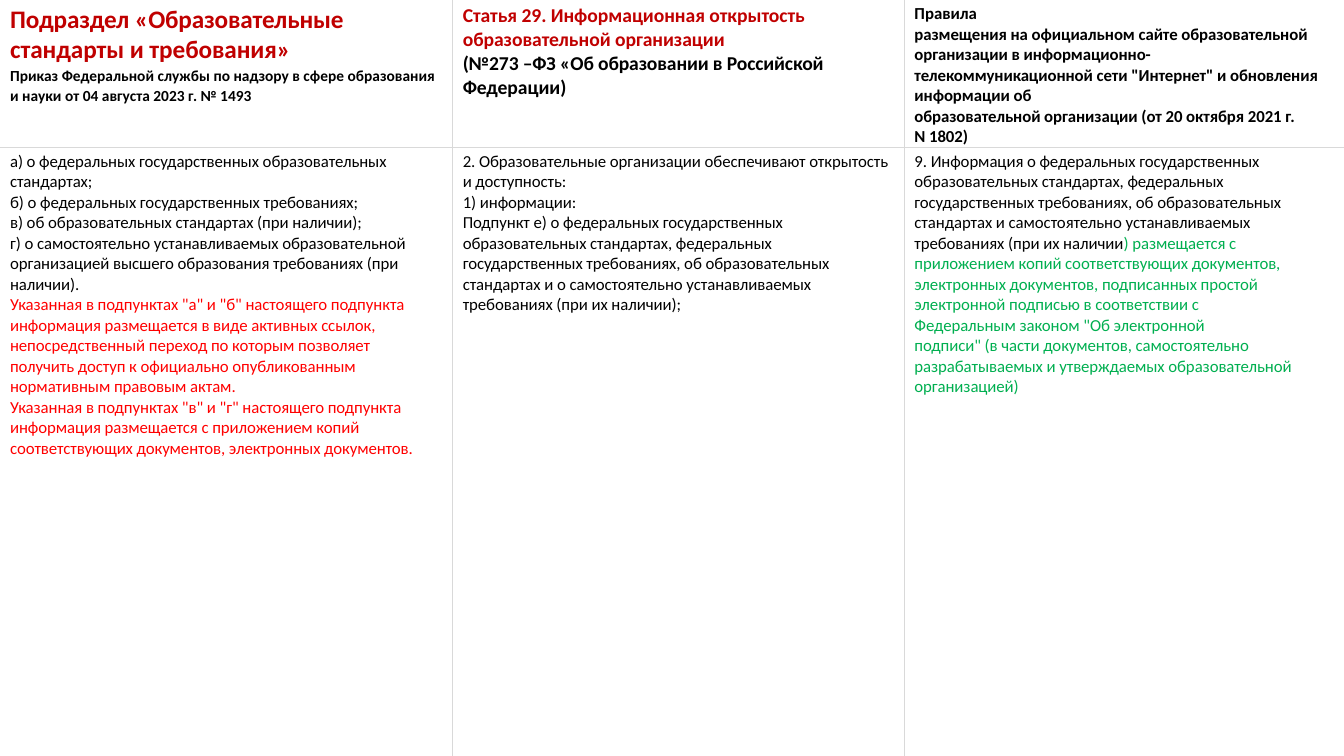
"""Build a slide comparing three legal sources in a two-row table."""
from dataclasses import dataclass

from lxml.etree import SubElement
from pptx import Presentation
from pptx.dml.color import RGBColor
from pptx.enum.shapes import MSO_CONNECTOR as CONN
from pptx.oxml.ns import qn
from pptx.table import _Cell as Cell
from pptx.text.text import _Paragraph as Paragraph
from pptx.util import Inches, Pt

BLACK, MAROON, RED, GREEN, GRAY = "000000", "C00000", "FF0000", "00AF50", "D9D9D9"
COLUMNS = (4.49, 4.48, 4.38)
ROWS = (1.34, 3.05)
INDENT = 0.1
NO_STYLE = "{2D5ABB26-0587-4C30-8999-92F81FD0307C}"


@dataclass
class Para:
    text: str
    size: int = 12
    color: str = BLACK
    right: float = 0.1
    before: float = 0
    spacing: int = -5
    tail: str = ""
    tail_color: str = GREEN


HEADERS = [
    [
        Para("Подраздел «Образовательные", 18, MAROON, before=2.4, spacing=-10),
        Para("стандарты и требования»", 18, MAROON),
        Para("Приказ Федеральной службы по надзору в сфере образования", 11,
             right=0.05, before=0.6, spacing=0),
        Para("и науки от 04 августа 2023 г. № 1493", 11, before=0.9, spacing=0),
    ],
    [
        Para("Статья 29. Информационная открытость", 14, MAROON),
        Para("образовательной организации", 14, MAROON),
        Para("(№273 –ФЗ «Об образовании в Российской", 14, spacing=-10),
        Para("Федерации)", 14),
    ],
    [
        Para("Правила", spacing=0),
        Para("размещения на официальном сайте образовательной"),
        Para("организации в информационно-телекоммуникационной сети \"Интернет\" "
             "и обновления информации об", right=0.2),
        Para("образовательной организации (от 20 октября 2021 г."),
        Para("N 1802)"),
    ],
]
BODIES = [
    [
        Para("а) о федеральных государственных образовательных стандартах;", right=0.3),
        Para("б) о федеральных государственных требованиях;", right=0.3),
        Para("в) об образовательных стандартах (при наличии);", right=0.3),
        Para("г) о самостоятельно устанавливаемых образовательной организацией "
             "высшего образования требованиях (при наличии).", right=0.3),
        Para("Указанная в подпунктах \"а\" и \"б\" настоящего подпункта информация "
             "размещается в виде активных ссылок,", color=RED, right=0.3),
        Para("непосредственный переход по которым позволяет получить доступ "
             "к официально опубликованным нормативным правовым актам.",
             color=RED, right=0.3),
        Para("Указанная в подпунктах \"в\" и \"г\" настоящего подпункта информация "
             "размещается с приложением копий соответствующих документов, "
             "электронных документов.", color=RED, right=0.3),
    ],
    [
        Para("2. Образовательные организации обеспечивают открытость и доступность:",
             right=0.14),
        Para("1) информации:", right=0.14),
        Para("Подпункт е) о федеральных государственных образовательных стандартах, "
             "федеральных государственных требованиях, об образовательных стандартах "
             "и о самостоятельно устанавливаемых требованиях (при их наличии);",
             right=0.14),
    ],
    [
        Para("9. Информация о федеральных государственных образовательных стандартах, "
             "федеральных государственных требованиях, об образовательных стандартах "
             "и самостоятельно устанавливаемых", right=0.3),
        Para("требованиях (при их наличии", right=0.5,
             tail=") размещается с приложением копий соответствующих документов, "
                  "электронных документов, подписанных простой электронной подписью "
                  "в соответствии с Федеральным законом \"Об электронной"),
        Para("подписи\" (в части документов, самостоятельно разрабатываемых "
             "и утверждаемых образовательной организацией)", color=GREEN, right=0.3),
    ],
]


def rgb(color: str) -> RGBColor:
    """Turn a hex string into a colour."""
    return RGBColor.from_string(color)


def add_run(p: Paragraph, text: str, color: str, spacing: int) -> None:
    """Add coloured text with the given letter spacing to a paragraph."""
    r = p.add_run()
    r.text = text
    r.font.color.rgb = rgb(color)
    r._r.get_or_add_rPr().set("spc", str(spacing))


def write_cell(cell: Cell, paras: list[Para], bold: bool) -> None:
    """Fill a cell with formatted paragraphs."""
    cell.fill.background()
    cell.margin_left = cell.margin_right = cell.margin_bottom = 0
    cell.margin_top = Inches(0.04)
    tf = cell.text_frame
    for i, para in enumerate(paras):
        p = tf.add_paragraph() if i else tf.paragraphs[0]
        p.space_before = Pt(para.before if i else para.before or 3)
        p.font.name, p.font.size, p.font.bold = "Calibri", Pt(para.size), bold
        pPr = p._p.get_or_add_pPr()
        pPr.set("marL", str(Inches(INDENT)))
        pPr.set("marR", str(Inches(para.right)))
        add_run(p, para.text, para.color, para.spacing)
        if para.tail:
            add_run(p, para.tail, para.tail_color, para.spacing)


def add_border(cell: Cell, side: str) -> None:
    """Draw a thin gray line on one side of a cell."""
    tcPr = cell._tc.get_or_add_tcPr()
    ln = SubElement(tcPr, qn(f"a:{side}"), w=str(Pt(1)))
    tcPr.insert(0, ln)
    fill = SubElement(ln, qn("a:solidFill"))
    SubElement(fill, qn("a:srgbClr"), val=GRAY)


def main() -> None:
    """Create the slide and save it."""
    prs = Presentation()
    prs.slide_width, prs.slide_height = Inches(13.33), Inches(7.5)
    s = prs.slides.add_slide(prs.slide_layouts[6])

    for x in (COLUMNS[0], COLUMNS[0] + COLUMNS[1]):
        line = s.shapes.add_connector(CONN.STRAIGHT, Inches(x), 0, Inches(x), prs.slide_height)
        line.line.color.rgb = rgb(GRAY)
        line.line.width = Pt(1)
        SubElement(line._element.spPr, qn("a:effectLst"))

    frame = s.shapes.add_table(len(ROWS), len(COLUMNS), 0, 0,
                               Inches(sum(COLUMNS)), Inches(sum(ROWS)))
    table = frame.table
    table.first_row = table.horz_banding = False
    table._tbl.tblPr.find(qn("a:tableStyleId")).text = NO_STYLE
    for column, width in zip(table.columns, COLUMNS):
        column.width = Inches(width)
    for i, (height, texts, side) in enumerate(zip(ROWS, (HEADERS, BODIES), ("lnB", "lnT"))):
        table.rows[i].height = Inches(height)
        for j, paras in enumerate(texts):
            write_cell(table.cell(i, j), paras, bold=i == 0)
            add_border(table.cell(i, j), side)

    prs.save("out.pptx")


if __name__ == "__main__":
    main()
